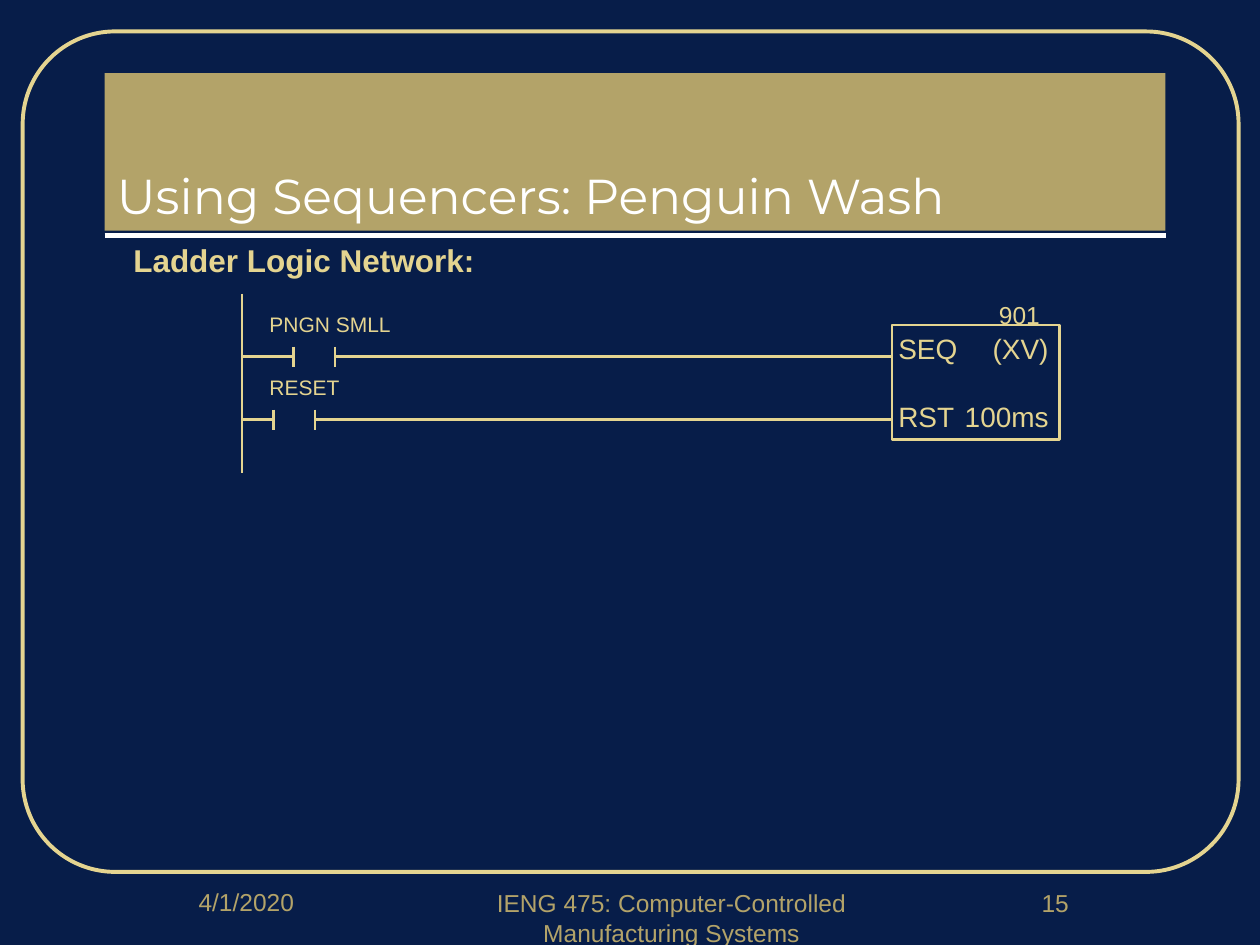
"""Build the ladder logic slide for the penguin wash sequencer."""
import pptx
import pptx.dml.color
import pptx.enum.shapes
import pptx.enum.text
import pptx.oxml
import pptx.oxml.ns
import pptx.util

Inches = pptx.util.Inches
Pt = pptx.util.Pt
Shape = pptx.enum.shapes.MSO_SHAPE
Align = pptx.enum.text.PP_ALIGN
Anchor = pptx.enum.text.MSO_ANCHOR
RGB = pptx.dml.color.RGBColor.from_string
hues = {"navy": "071D49", "gold": "B3A369", "sand": "E4D490", "white": "FFFFFF"}

deck = pptx.Presentation()
deck.slide_width, deck.slide_height = Inches(10), Inches(7.5)
slide = deck.slides.add_slide(deck.slide_layouts[6])
slide.background.fill.solid()
slide.background.fill.fore_color.rgb = RGB(hues["navy"])


def wire(x1, y1, x2, y2, hue="sand", width=1.5):
    line = slide.shapes.add_connector(
        pptx.enum.shapes.MSO_CONNECTOR.STRAIGHT,
        Inches(x1), Inches(y1), Inches(x2), Inches(y2))
    line.line.color.rgb = RGB(hues[hue])
    line.line.width = Pt(width)
    line._element.spPr.append(pptx.oxml.parse_xml(
        "<a:effectLst %s/>" % pptx.oxml.ns.nsdecls("a")))


def write(shape, text, size, hue="sand", align=Align.LEFT, font="Arial"):
    frame = shape.text_frame
    frame.word_wrap = True
    frame.text = text
    for para in frame.paragraphs:
        para.alignment = align
        for run in para.runs:
            run.font.size = Pt(size)
            run.font.name = font
            run.font.color.rgb = RGB(hues[hue])
    return frame


border = slide.shapes.add_shape(
    Shape.ROUNDED_RECTANGLE, Inches(0.18), Inches(0.25), Inches(9.65), Inches(6.67))
border.adjustments[0] = 0.11
block = slide.shapes.add_shape(
    Shape.RECTANGLE, Inches(7.08), Inches(2.58), Inches(1.33), Inches(0.91))
for shape, width in ((border, 2.25), (block, 1.5)):
    shape.shadow.inherit = False
    shape.fill.background()
    shape.line.color.rgb = RGB(hues["sand"])
    shape.line.width = Pt(width)

title = slide.shapes.add_shape(
    Shape.RECTANGLE, Inches(0.83), Inches(0.58), Inches(8.42), Inches(1.25))
title.shadow.inherit = False
title.fill.solid()
title.fill.fore_color.rgb = RGB(hues["gold"])
title.line.fill.background()
frame = write(title, "Using Sequencers: Penguin Wash", 28, "white", font="Montserrat")
frame.vertical_anchor = Anchor.BOTTOM
wire(0.83, 1.87, 9.25, 1.87, "white", 3)

head = slide.shapes.add_textbox(Inches(0.96), Inches(1.92), Inches(8.62), Inches(0.33))
para = write(head, "Ladder Logic Network:", 18).paragraphs[0]
para.line_spacing = 0.8
para.runs[0].font.bold = True

feet = [
    ("4/1/2020", 0.83, 6.99, 2.25),
    ("IENG 475: Computer-Controlled Manufacturing Systems", 3.58, 7, 3.5),
    ("15", 7.5, 7, 1.75),
]
for text, left, top, width in feet:
    foot = slide.shapes.add_textbox(Inches(left), Inches(top), Inches(width), Inches(0.5))
    write(foot, text, 14, "gold", Align.CENTER)

rail = 1.92
wire(rail, 2.33, rail, 3.75)
rungs = [("PNGN SMLL", 2.83, 2.33), ("RESET", 3.33, 2.17)]
for text, y, left in rungs:
    right = left + 0.33
    wire(rail, y, left, y)
    wire(right, y, 7.08, y)
    for x in (left, right):
        wire(x, y - 0.08, x, y + 0.08)
    label = slide.shapes.add_textbox(Inches(2.04), Inches(y - 0.41), Inches(1.25), Inches(0.3))
    write(label, text, 12)

code = slide.shapes.add_textbox(Inches(7.83), Inches(2.33), Inches(0.67), Inches(0.34))
write(code, "901", 14)

values = slide.shapes.add_textbox(Inches(7.5), Inches(2.58), Inches(0.92), Inches(0.91))
names = write(block, "SEQ\nRST", 16)
names.margin_left = names.margin_right = Inches(0.05)
names.vertical_anchor = Anchor.TOP
for frame in (names, write(values, "(XV)\n100ms", 16, align=Align.RIGHT)):
    frame.paragraphs[1].space_before = Pt(20)

deck.save("out.pptx")
